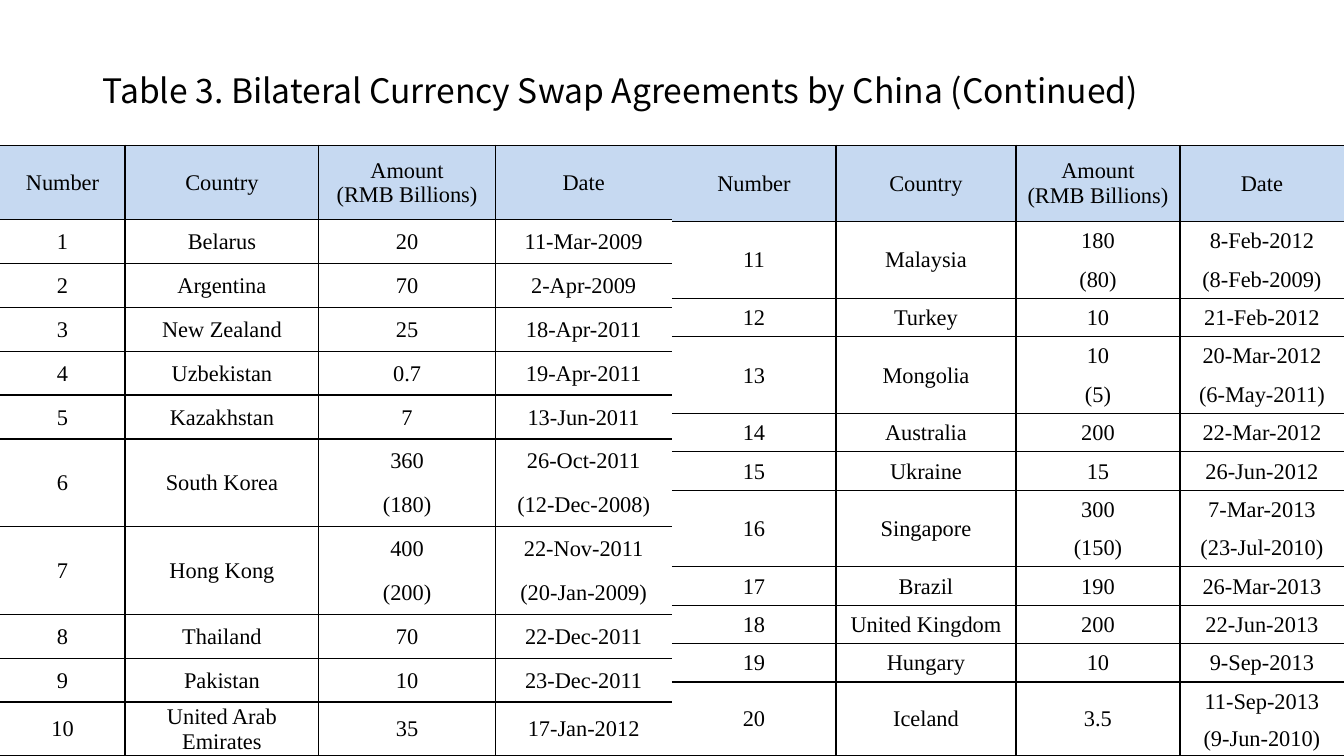
from pptx import Presentation, util as u
from pptx.dml.color import RGBColor
from pptx.enum import text as t
from pptx.oxml import parse_xml
from pptx.oxml.ns import nsdecls

BLACK = RGBColor(0x00, 0x00, 0x00)
BLUE = RGBColor(0xC6, 0xD9, 0xF1)
SANS, SERIF = "Noto Sans CJK KR", "Times New Roman"
PLAIN = "{2D5ABB26-0587-4C30-8999-92F81FD0307C}"  # table style without grid

# A slash splits an entry over two rows: the renewed deal, then the first one.
HEAD = ("Number", "Country", "Amount\v(RMB Billions)", "Date")
EARLY = [
    ("Belarus", "20", "11-Mar-2009"),
    ("Argentina", "70", "2-Apr-2009"),
    ("New Zealand", "25", "18-Apr-2011"),
    ("Uzbekistan", "0.7", "19-Apr-2011"),
    ("Kazakhstan", "7", "13-Jun-2011"),
    ("South Korea", "360/(180)", "26-Oct-2011/(12-Dec-2008)"),
    ("Hong Kong", "400/(200)", "22-Nov-2011/(20-Jan-2009)"),
    ("Thailand", "70", "22-Dec-2011"),
    ("Pakistan", "10", "23-Dec-2011"),
    ("United Arab\nEmirates", "35", "17-Jan-2012"),
]
LATE = [
    ("Malaysia", "180/(80)", "8-Feb-2012/(8-Feb-2009)"),
    ("Turkey", "10", "21-Feb-2012"),
    ("Mongolia", "10/(5)", "20-Mar-2012/(6-May-2011)"),
    ("Australia", "200", "22-Mar-2012"),
    ("Ukraine", "15", "26-Jun-2012"),
    ("Singapore", "300/(150)", "7-Mar-2013/(23-Jul-2010)"),
    ("Brazil", "190", "26-Mar-2013"),
    ("United Kingdom", "200", "22-Jun-2013"),
    ("Hungary", "10", "9-Sep-2013"),
    ("Iceland", "3.5", "11-Sep-2013/(9-Jun-2010)"),
]


def write(frame, words, font=SERIF, size=16, color=BLACK,
          align=t.PP_ALIGN.CENTER, space=None):
    """Fill a text frame and format every paragraph."""
    frame.text = words
    for par in frame.paragraphs:
        par.alignment, par.line_spacing = align, space
        for run in par.runs:
            run.font.name, run.font.size = font, u.Pt(size)
            run.font.color.rgb = color


def border(cell, sides):
    """Draw the named sides (L, R, T, B) and clear the others."""
    props = cell._tc.get_or_add_tcPr()
    for spot, side in enumerate("LRTB"):
        paint = (f'<a:solidFill><a:srgbClr val="{BLACK}"/></a:solidFill>'
                 if side in sides else "<a:noFill/>")
        props.insert(spot, parse_xml(
            f'<a:ln{side} {nsdecls("a")} w="{u.Pt(1)}">{paint}</a:ln{side}>'))


class Page:
    def __init__(self, deck):
        self.wide, self.high = deck.slide_width, deck.slide_height
        self.slide = deck.slides.add_slide(deck.slide_layouts[5])

    def box(self, x, y, w, h):
        """Turn shares of the slide into lengths."""
        return [round(v) for v in (x * self.wide, y * self.high,
                                   w * self.wide, h * self.high)]

    def title(self, words, *area):
        shape = self.slide.shapes.title
        shape.left, shape.top, shape.width, shape.height = self.box(*area)
        frame = shape.text_frame
        write(frame, words, font=SANS, size=24, align=t.PP_ALIGN.LEFT, space=0.9)
        frame.vertical_anchor = t.MSO_ANCHOR.MIDDLE
        frame.auto_size = t.MSO_AUTO_SIZE.NONE

    def table(self, area, cols, head, last, deals, start):
        """Head and last are row heights as shares of the table."""
        recs = [HEAD] + [(str(n), *deal) for n, deal in enumerate(deals, start)]
        recs = [[item.split("/") for item in rec] for rec in recs]
        spans = [max(map(len, rec)) for rec in recs]
        count = sum(spans)
        x, y, w, h = self.box(*area)
        grid = self.slide.shapes.add_table(count, len(cols), x, y, w, h).table
        grid.first_row = grid.horz_banding = False
        grid._tbl.tblPr.find("{*}tableStyleId").text = PLAIN

        # Sizes
        for col, part in zip(grid.columns, cols):
            col.width = round(w * part / sum(cols))
        step = (1 - head - last) / (count - 2)
        for row, part in zip(grid.rows, [head] + [step] * (count - 2) + [last]):
            row.height = round(h * part)

        # Cells
        top = 0
        for rec, span in zip(recs, spans):
            for c, parts in enumerate(rec):
                whole = len(parts) == 1
                if whole and span > 1:
                    grid.cell(top, c).merge(grid.cell(top + span - 1, c))
                sides = "R" * (c < len(cols) - 1) + "L" * (c > 0)
                for k in range(span):
                    cell = grid.cell(top + k, c)
                    cell.vertical_anchor = t.MSO_ANCHOR.MIDDLE
                    cell.margin_left = cell.margin_right = u.Inches(0.01)
                    cell.margin_top, cell.margin_bottom = u.Inches(0.01), 0
                    if k < len(parts):
                        write(cell.text_frame, parts[k])
                    if top == 0:
                        cell.fill.solid()
                        cell.fill.fore_color.rgb = BLUE
                    else:
                        cell.fill.background()
                    ends = "T" * (k == 0) + "B" * (k == span - 1 or whole and k == 0)
                    border(cell, sides + ends)
            top += span


def main():
    deck = Presentation()
    deck.slide_width, deck.slide_height = u.Inches(13.33), u.Inches(7.5)
    page = Page(deck)

    # Heading
    page.title("Table 3. Bilateral Currency Swap Agreements by China (Continued)",
               0.069, 0.053, 0.863, 0.193 - 0.053)

    # Two tables side by side, down to the foot of the slide
    top = 0.192
    page.table((0, top, 0.5, 1 - top), (1.24, 1.92, 1.75, 1.75),
               0.122, 0.088, EARLY, 1)
    page.table((0.5, top, 0.5, 1 - top), (1.63, 1.79, 1.63, 1.63),
               0.125, 0.058, LATE, len(EARLY) + 1)
    deck.save("out.pptx")


if __name__ == "__main__":
    main()
